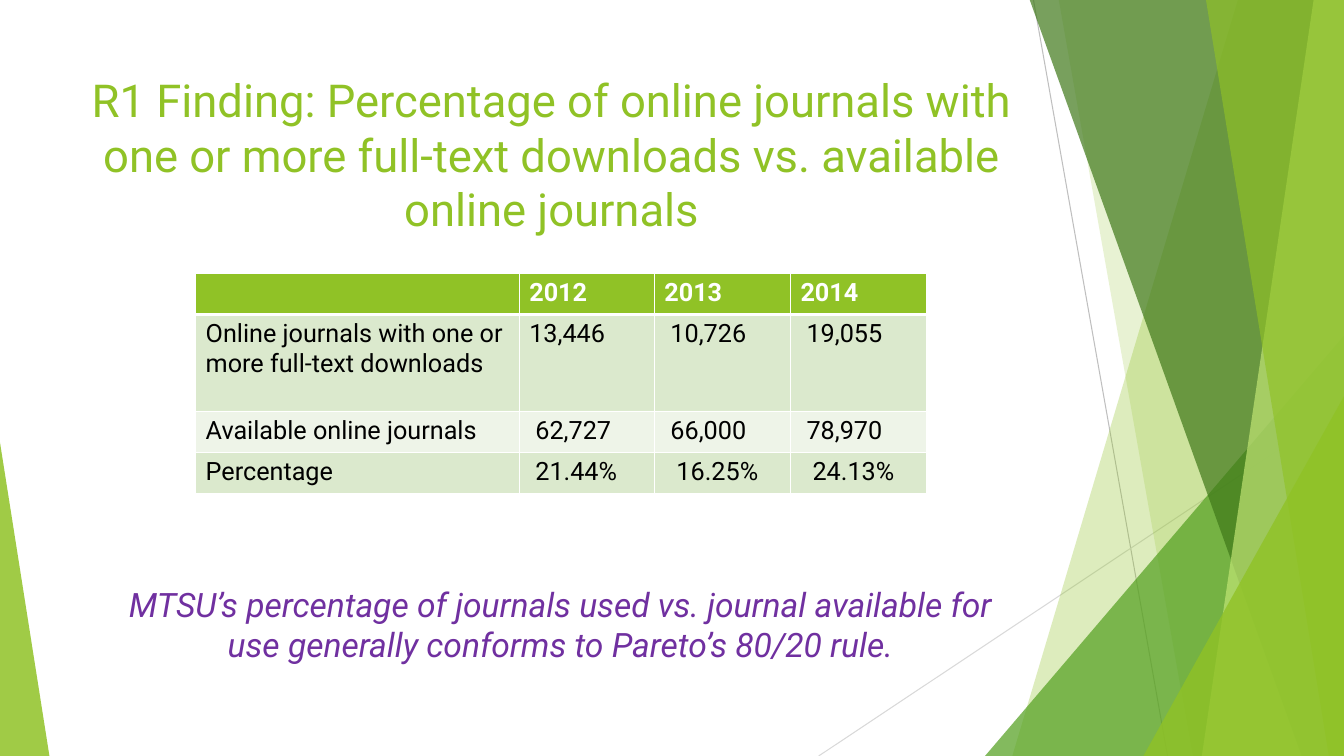
"""Builds a slide with a table of online journal use and a faceted green edge."""
from dataclasses import dataclass

from lxml import etree
from pptx import Presentation
from pptx.dml.color import RGBColor
from pptx.enum.shapes import MSO_CONNECTOR, MSO_SHAPE
from pptx.enum.text import MSO_ANCHOR, PP_ALIGN
from pptx.oxml.ns import qn
from pptx.util import Emu, Pt

STRAIGHT = MSO_CONNECTOR.STRAIGHT
TRIANGLE = MSO_SHAPE.ISOSCELES_TRIANGLE
TOP = MSO_ANCHOR.TOP
LEFT, CENTER = PP_ALIGN.LEFT, PP_ALIGN.CENTER
EMU_PER_PX = 9144
SLIDE_WIDTH, SLIDE_HEIGHT = 1333, 750
BLANK_LAYOUT = 6


@dataclass(frozen=True)
class Theme:
    """Colours, font and type sizes of the slide."""
    lime: str = "90C226"
    green: str = "54A021"
    forest: str = "3F7819"
    pale_lime: str = "C0E474"
    band_dark: str = "DBE9CD"
    band_light: str = "EEF4E8"
    purple: str = "7030A0"
    black: str = "000000"
    white: str = "FFFFFF"
    grey: str = "BFBFBF"
    light_grey: str = "D9D9D9"
    font: str = "Roboto"
    title_size: float = 32.4
    table_size: float = 18
    note_size: float = 24


THEME = Theme()

COLUMN_WIDTHS = [321, 134, 135, 135]
ROW_HEIGHTS = [41, 96, 41, 41]
JOURNAL_ROWS = [
    ["", "2012", "2013", "2014"],
    ["Online journals with one or more full-text downloads", "13,446", "10,726", "19,055"],
    ["Available online journals", "62,727", "66,000", "78,970"],
    ["Percentage", "21.44%", "16.25%", "24.13%"],
]
INDENT_LEVELS = [[0, 0, 0, 0], [0, 0, 1, 1], [0, 1, 1, 1], [0, 1, 2, 2]]
INDENT_STEP = 6
CELL_MARGIN = 10


def px(length):
    """Turn a length in px into EMU."""
    return Emu(length * EMU_PER_PX)


def apply_format(target, values):
    """Set each named attribute of the target."""
    for name, value in values.items():
        setattr(target, name, value)


def write_text(frame, text, size, colour, align=LEFT, **emphasis):
    """Fill a text frame with one formatted paragraph."""
    frame.word_wrap = True
    paragraph = frame.paragraphs[0]
    paragraph.alignment = align
    run = paragraph.add_run()
    run.text = text
    apply_format(run.font, {"name": THEME.font, "size": Pt(size), **emphasis})
    run.font.color.rgb = RGBColor.from_string(colour)


def add_text(slide, box, text, size, colour, **emphasis):
    """Add a centred text box."""
    frame = slide.shapes.add_textbox(*map(px, box)).text_frame
    frame.vertical_anchor = TOP
    write_text(frame, text, size, colour, CENTER, **emphasis)


def add_hairline(slide, ends, colour):
    """Add a thin straight line."""
    hairline = slide.shapes.add_connector(STRAIGHT, *map(px, ends))
    hairline.line.width = Pt(0.75)
    hairline.line.color.rgb = RGBColor.from_string(colour)
    etree.SubElement(hairline.element.spPr, qn("a:effectLst"))


def paint_facet(facet, colour, opacity):
    """Give a facet a see-through fill without outline or shadow."""
    facet.shadow.inherit = False
    facet.line.fill.background()
    facet.fill.solid()
    facet.fill.fore_color.rgb = RGBColor.from_string(colour)
    tint = facet.element.spPr.find(f"{qn('a:solidFill')}/{qn('a:srgbClr')}")
    etree.SubElement(tint, qn("a:alpha"), val=str(opacity * 1000))


def add_edge_facet(slide, top_left, bottom_left, colour, opacity):
    """Add a facet that reaches from a slanted side to the right slide edge."""
    top = -1
    outline = slide.shapes.build_freeform(top_left, top, scale=EMU_PER_PX)
    outline.add_line_segments(
        [(SLIDE_WIDTH, top), (SLIDE_WIDTH, SLIDE_HEIGHT), (bottom_left, SLIDE_HEIGHT)])
    paint_facet(outline.convert_to_shape(), colour, opacity)


def add_corner_facet(slide, left, top, width, apex, colour, opacity):
    """Add a right triangle that stands on the bottom slide edge."""
    box = (left, top, width, SLIDE_HEIGHT - top)
    corner = slide.shapes.add_shape(TRIANGLE, *map(px, box))
    corner.adjustments[0] = apex
    paint_facet(corner, colour, opacity)


def add_border(cell, side, points):
    """Draw one white side of a table cell."""
    border = etree.SubElement(
        cell._tc.get_or_add_tcPr(), qn(f"a:ln{side}"), w=str(Pt(points)))
    paint = etree.SubElement(border, qn("a:solidFill"))
    etree.SubElement(paint, qn("a:srgbClr"), val=THEME.white)


def format_cell(cell, text, indent, is_header, fill):
    """Write, border and fill one table cell."""
    cell.margin_left = px(CELL_MARGIN + indent * INDENT_STEP)
    colour = THEME.white if is_header else THEME.black
    write_text(cell.text_frame, text, THEME.table_size, colour, bold=is_header)
    for side in "LRTB":
        add_border(cell, side, 3 if is_header and side == "B" else 1)
    cell.fill.solid()
    cell.fill.fore_color.rgb = RGBColor.from_string(fill)


def add_journal_table(slide, left, top):
    """Add the table of journals used and available by year."""
    box = (left, top, sum(COLUMN_WIDTHS), sum(ROW_HEIGHTS))
    table = slide.shapes.add_table(
        len(ROW_HEIGHTS), len(COLUMN_WIDTHS), *map(px, box)).table
    for column, width in zip(table.columns, COLUMN_WIDTHS):
        column.width = px(width)
    fills = [THEME.lime, THEME.band_dark, THEME.band_light, THEME.band_dark]
    for r, (row, height) in enumerate(zip(table.rows, ROW_HEIGHTS)):
        row.height = px(height)
        for cell, text, indent in zip(row.cells, JOURNAL_ROWS[r], INDENT_LEVELS[r]):
            format_cell(cell, text, indent, r == 0, fills[r])


def add_backdrop(slide):
    """Add the hairlines and green facets from back to front."""
    add_hairline(slide, (1025, 0, 1158, 750), THEME.grey)
    add_hairline(slide, (1333, 403, 812, 750), THEME.light_grey)
    add_edge_facet(slide, 1228, 1004, THEME.lime, 30)
    add_edge_facet(slide, 1050, 1183, THEME.lime, 20)
    add_corner_facet(slide, 977, 333, 356, 1, THEME.green, 72)
    add_edge_facet(slide, 1021, 1291, THEME.forest, 70)
    add_edge_facet(slide, 1303, 1192, THEME.pale_lime, 70)
    add_edge_facet(slide, 1196, 1318, THEME.lime, 65)
    add_corner_facet(slide, 1134, 393, 199, 1, THEME.lime, 80)
    add_corner_facet(slide, 0, 439, 49, 0, THEME.lime, 85)


def main():
    """Build and save the slide."""
    deck = Presentation()
    apply_format(deck, {"slide_width": px(SLIDE_WIDTH), "slide_height": px(SLIDE_HEIGHT)})
    slide = deck.slides.add_slide(deck.slide_layouts[BLANK_LAYOUT])
    add_backdrop(slide)
    add_text(slide, (74, 67, 946, 159),
             "R1 Finding: Percentage of online journals with one or more "
             "full-text downloads vs. available online journals",
             THEME.title_size, THEME.lime)
    add_journal_table(slide, 194, 271)
    add_text(slide, (111, 574, 890, 91),
             "MTSU’s percentage of journals used vs. journal available for use "
             "generally conforms to Pareto’s 80/20 rule.",
             THEME.note_size, THEME.purple, italic=True)
    deck.save("out.pptx")


if __name__ == "__main__":
    main()
